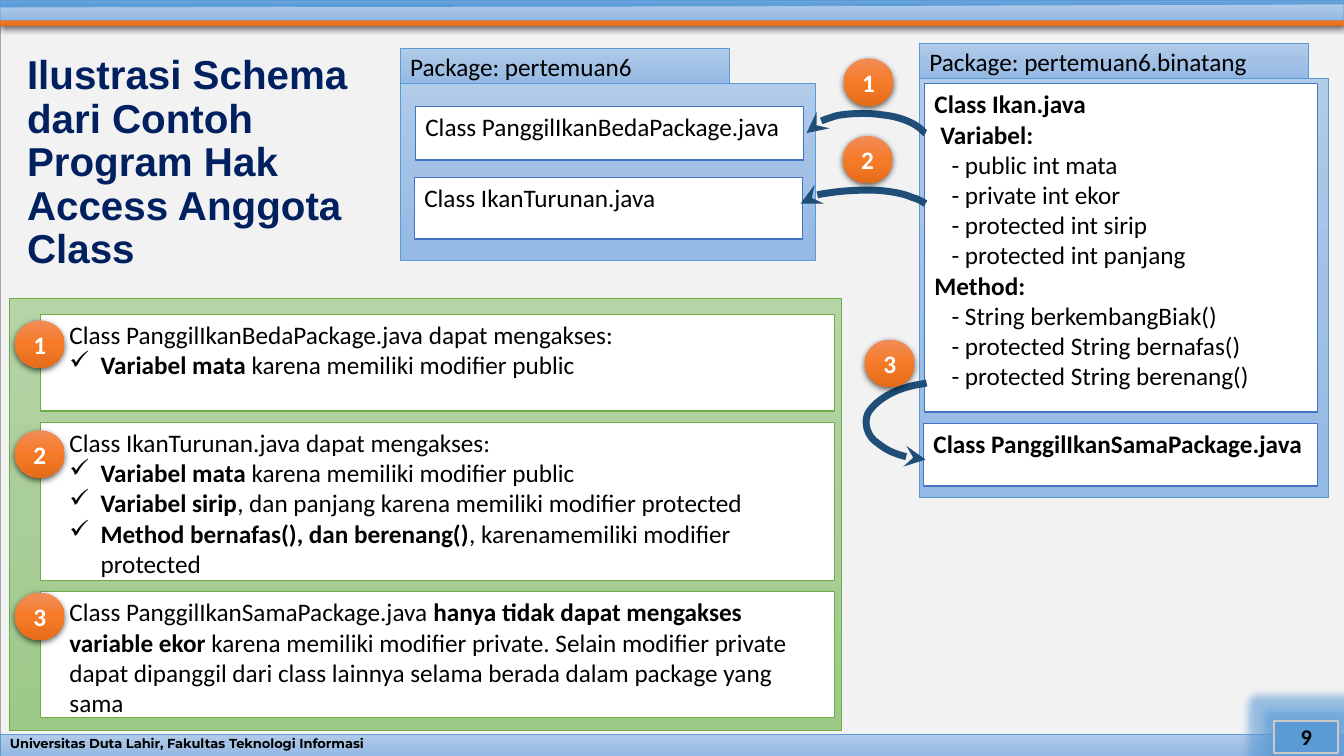
from copy import deepcopy
from dataclasses import dataclass, field
from typing import NamedTuple, Optional, Union

from lxml.etree import SubElement
from pptx import Presentation
from pptx.dml.color import RGBColor
from pptx.enum.shapes import MSO_SHAPE as Preset
from pptx.enum.text import MSO_ANCHOR as Anchor, PP_ALIGN as Align
from pptx.oxml.ns import qn
from pptx.util import Inches, Pt

Fill = Union[str, tuple[str, str, str]]
Point = tuple[float, float]


@dataclass(frozen=True)
class Theme:
    white: str = "FFFFFF"
    black: str = "000000"
    backdrop: str = "F2F2F2"
    backdrop_edge: str = "A5A5A5"
    navy: str = "002060"
    blue: str = "5B9BD5"
    class_edge: str = "4472C4"
    arrow: str = "1F4E79"
    green: str = "70AD47"
    number_edge: str = "C9C9C9"
    pale_blue: Fill = ("B1CBE9", "A3C1E5", "93B9E4")
    strong_blue: Fill = ("71A6DB", "559BDB", "448ACA")
    pale_green: Fill = ("B5D5A7", "AACE9A", "9CC987")
    orange: Fill = ("F18C57", "F67B28", "E56C19")
    body_font: str = "Calibri"
    title_font: str = "Arial"
    footer_font: str = "Montserrat"
    body_size: float = 18
    title_size: float = 28.8
    number_size: float = 16
    footer_size: float = 9.3


THEME = Theme()


class Run(NamedTuple):
    text: str
    bold: bool = False


class Para(NamedTuple):
    runs: list[Run]
    margin: float = 0
    checked: bool = False


@dataclass
class Style:
    font: str = THEME.body_font
    size: float = THEME.body_size
    color: str = THEME.black
    align: Align = Align.LEFT
    anchor: Anchor = Anchor.TOP
    spacing: Optional[float] = None
    inset: Optional[float] = None


@dataclass
class Box:
    at: tuple[float, float, float, float]
    fill: Fill
    edge: Optional[str] = None
    weight: float = 0.5
    paras: list[Para] = field(default_factory=list)
    style: Style = field(default_factory=Style)
    preset: Preset = Preset.RECTANGLE


def line(text: str, bold: bool = False, margin: float = 0) -> Para:
    return Para([Run(text, bold)], margin)


def check(strong: str, rest: str) -> Para:
    return Para([Run(strong, True), Run(rest)], 0.5, True)


def paint(shape, fill: Fill, edge: Optional[str], weight: float) -> None:
    shape.shadow.inherit = False
    if isinstance(fill, str):
        shape.fill.solid()
        shape.fill.fore_color.rgb = RGBColor.from_string(fill)
    else:
        shape.fill.gradient()
        shape.fill.gradient_angle = 270
        first = shape.element.spPr.find(".//" + qn("a:gs"))
        first.addnext(deepcopy(first))
        for stop, color, position in zip(shape.fill.gradient_stops, fill, (0, 0.5, 1)):
            stop.color.rgb = RGBColor.from_string(color)
            stop.position = position
    if edge:
        shape.line.color.rgb = RGBColor.from_string(edge)
        shape.line.width = Pt(weight)
    else:
        shape.line.fill.background()


def add_effect(shape, kind: str, color: str, alpha: int, **settings: str) -> None:
    effects = shape.element.spPr.find(qn("a:effectLst"))
    effect = SubElement(effects, qn(f"a:{kind}"), settings)
    tone = SubElement(effect, qn("a:srgbClr"), val=color)
    SubElement(tone, qn("a:alpha"), val=str(alpha * 1000))


def add_drop_shadow(shape) -> None:
    add_effect(shape, "outerShdw", THEME.black, 63, blurRad=str(Pt(4.5)),
               dist=str(Pt(1.5)), dir="5400000", rotWithShape="0")


def write(frame, paras: list[Para], style: Style) -> None:
    frame.word_wrap = True
    frame.vertical_anchor = style.anchor
    if style.inset is not None:
        frame.margin_left = frame.margin_right = Inches(style.inset)
        frame.margin_top = frame.margin_bottom = Inches(style.inset)
    for index, para in enumerate(paras):
        paragraph = frame.paragraphs[0] if index == 0 else frame.add_paragraph()
        paragraph.alignment = style.align
        if style.spacing:
            paragraph.line_spacing = style.spacing
        props = paragraph._p.get_or_add_pPr()
        props.set("marL", str(Inches(para.margin)))
        props.set("indent", str(Inches(-0.31 if para.checked else 0)))
        if para.checked:
            SubElement(props, qn("a:buChar"), char="✓")
        for text, bold in para.runs:
            run = paragraph.add_run()
            run.text = text
            run.font.name, run.font.size, run.font.bold = style.font, Pt(style.size), bold
            run.font.color.rgb = RGBColor.from_string(style.color)


def add_box(slide, box: Box):
    shape = slide.shapes.add_shape(box.preset, *map(Inches, box.at))
    paint(shape, box.fill, box.edge, box.weight)
    if box.paras:
        write(shape.text_frame, box.paras, box.style)
    return shape


def add_outline(slide, points: list[Point], close: bool = True):
    start, *rest = [(Inches(x), Inches(y)) for x, y in points]
    builder = slide.shapes.build_freeform(*start)
    builder.add_line_segments(rest, close=close)
    return builder.convert_to_shape()


def add_curved_arrow(slide, points: list[Point]) -> None:
    """Draw Bézier segments (start, then control, control, end) with a head at the start."""
    arrow = add_outline(slide, points, close=False)
    paint(arrow, THEME.white, THEME.arrow, 5)
    arrow.fill.background()
    SubElement(arrow.element.spPr.find(qn("a:ln")), qn("a:headEnd"), type="stealth")
    steps = list(arrow.element.iter(qn("a:lnTo")))
    for first in range(0, len(steps), 3):
        curve = steps[first].makeelement(qn("a:cubicBezTo"))
        steps[first].addprevious(curve)
        for step in steps[first:first + 3]:
            curve.append(step[0])
            step.getparent().remove(step)


def add_badge(slide, number: int, left: float, top: float) -> None:
    style = Style(color=THEME.white, align=Align.CENTER, anchor=Anchor.MIDDLE, inset=0)
    add_drop_shadow(add_box(slide, Box((left, top, 0.49, 0.47), THEME.orange,
                                       paras=[line(str(number), True)], style=style,
                                       preset=Preset.OVAL)))


def add_package(slide, name: str, left: float, top: float, tab_width: float,
                width: float, height: float) -> None:
    tab = Box((left, top, tab_width, 0.35), THEME.pale_blue, THEME.blue,
              paras=[line(name)], style=Style(anchor=Anchor.MIDDLE))
    add_box(slide, tab)
    add_box(slide, Box((left, top + 0.35, width, height), THEME.pale_blue, THEME.blue))


def add_frame(slide) -> None:
    """Draw the backdrop, top bands, footer and page number."""
    add_box(slide, Box((0, 0.04, 13.33, 7.46), THEME.backdrop, THEME.backdrop_edge))
    orange_band = add_outline(slide, [(0.03, 0.13), (13.33, 0.13), (13.33, 0.26), (0, 0.26)])
    paint(orange_band, THEME.orange, None, 0)
    add_drop_shadow(orange_band)
    add_box(slide, Box((0, 0, 13.33, 0.11), THEME.strong_blue, THEME.blue))
    blue_band = add_outline(slide, [(0, 0.07), (7.33, 0.06), (13.33, 0.04), (13.33, 0.2), (0, 0.2)])
    paint(blue_band, THEME.pale_blue, THEME.blue, 0.5)
    add_box(slide, Box((0, 7.29, 13.33, 0.21), THEME.pale_blue, THEME.blue,
                       paras=[line("Universitas Duta Lahir, Fakultas Teknologi Informasi", True)],
                       style=Style(THEME.footer_font, THEME.footer_size,
                                   anchor=Anchor.MIDDLE, spacing=0.7)))
    page_number = add_box(slide, Box((12.64, 7.15, 0.63, 0.32), THEME.blue, THEME.number_edge, 1.5,
                                     [line("9", True)],
                                     Style(size=THEME.number_size, align=Align.CENTER,
                                           anchor=Anchor.MIDDLE)))
    add_effect(page_number, "glow", THEME.blue, 60, rad=str(Pt(12)))


MEMBERS = [line("Class Ikan.java", True), line("Variabel:", True, 0.06),
           *(line(f"- {name}", margin=0.17) for name in (
               "public int mata", "private int ekor", "protected int sirip",
               "protected int panjang")),
           line("Method:", True),
           *(line(f"- {name}", margin=0.17) for name in (
               "String berkembangBiak()", "protected String bernafas()",
               "protected String berenang()"))]
CLASSES = [((4.12, 1.06, 3.85, 0.53), [line("Class PanggilIkanBedaPackage.java")]),
           ((4.11, 1.76, 3.85, 0.61), [line("Class IkanTurunan.java")]),
           ((9.17, 0.83, 3.9, 3.26), MEMBERS),
           ((9.16, 4.2, 3.91, 0.62), [line("Class PanggilIkanSamaPackage.java", True)])]
PUBLIC_MATA = check("Variabel mata ", "karena memiliki modifier public")
NOTES = [(3.12, 0.96, 3.18, [
            line("Class PanggilIkanBedaPackage.java dapat mengakses:", margin=0.19), PUBLIC_MATA]),
         (4.19, 1.57, 4.27, [
            line("Class IkanTurunan.java dapat mengakses:", margin=0.19), PUBLIC_MATA,
            check("Variabel sirip", ", dan panjang karena memiliki modifier protected"),
            check("Method bernafas(), dan berenang()", ", karenamemiliki modifier protected")]),
         (5.87, 1.25, 5.88, [Para([
            Run("Class PanggilIkanSamaPackage.java "),
            Run("hanya tidak dapat mengakses variable ekor ", True),
            Run("karena memiliki modifier private. Selain modifier private dapat dipanggil "
                "dari class lainnya selama berada dalam package yang sama")], 0.19)])]
ARROWS = [[(8, 1.32), (8.03, 1.23), (8.17, 1.19), (8.29, 1.15), (8.42, 1.12), (8.64, 1.12),
           (8.75, 1.14), (8.86, 1.15), (8.97, 1.18), (9.06, 1.23), (9.15, 1.28), (9.16, 1.32),
           (9.18, 1.32)],
          [(7.94, 2.02), (7.97, 1.95), (8.11, 1.93), (8.25, 1.91), (8.38, 1.89), (8.61, 1.88),
           (8.72, 1.89), (8.84, 1.9), (8.96, 1.92), (9.05, 1.96), (9.15, 1.99), (9.15, 2.01),
           (9.18, 2.02)],
          [(9.18, 4.56), (8.9, 4.54), (8.77, 4.45), (8.67, 4.37), (8.58, 4.29), (8.57, 4.15),
           (8.62, 4.08), (8.67, 4.01), (8.76, 3.93), (8.91, 3.87), (9.07, 3.81), (9.17, 3.81),
           (9.19, 3.8)]]
ARROW_BADGES = [(8.37, 0.58), (8.36, 1.35), (8.58, 3.37)]


def main() -> None:
    deck = Presentation()
    deck.slide_width, deck.slide_height = Inches(13.33), Inches(7.5)
    slide = deck.slides.add_slide(deck.slide_layouts[6])
    add_frame(slide)
    title = slide.shapes.add_textbox(*map(Inches, (0.17, 0.41, 3.65, 2.43)))
    write(title.text_frame,
          [line("Ilustrasi Schema dari Contoh Program Hak Access Anggota Class", True)],
          Style(THEME.title_font, THEME.title_size, THEME.navy, anchor=Anchor.MIDDLE, spacing=0.9))
    add_package(slide, "Package: pertemuan6", 3.97, 0.48, 3.26, 4.12, 1.75)
    add_package(slide, "Package: pertemuan6.binatang", 9.12, 0.43, 3.86, 4.06, 4.16)
    for at, paras in CLASSES:
        add_box(slide, Box(at, THEME.white, THEME.class_edge, 1, paras))
    for points in ARROWS:
        add_curved_arrow(slide, points)
    for number, (left, top) in enumerate(ARROW_BADGES, 1):
        add_badge(slide, number, left, top)
    add_box(slide, Box((0.09, 2.96, 8.26, 4.29), THEME.pale_green, THEME.green))
    for number, (top, height, badge_top, paras) in enumerate(NOTES, 1):
        add_box(slide, Box((0.4, top, 7.88, height), THEME.white, THEME.green, 1, paras))
        add_badge(slide, number, 0.15, badge_top)
    deck.save("out.pptx")


if __name__ == "__main__":
    main()
